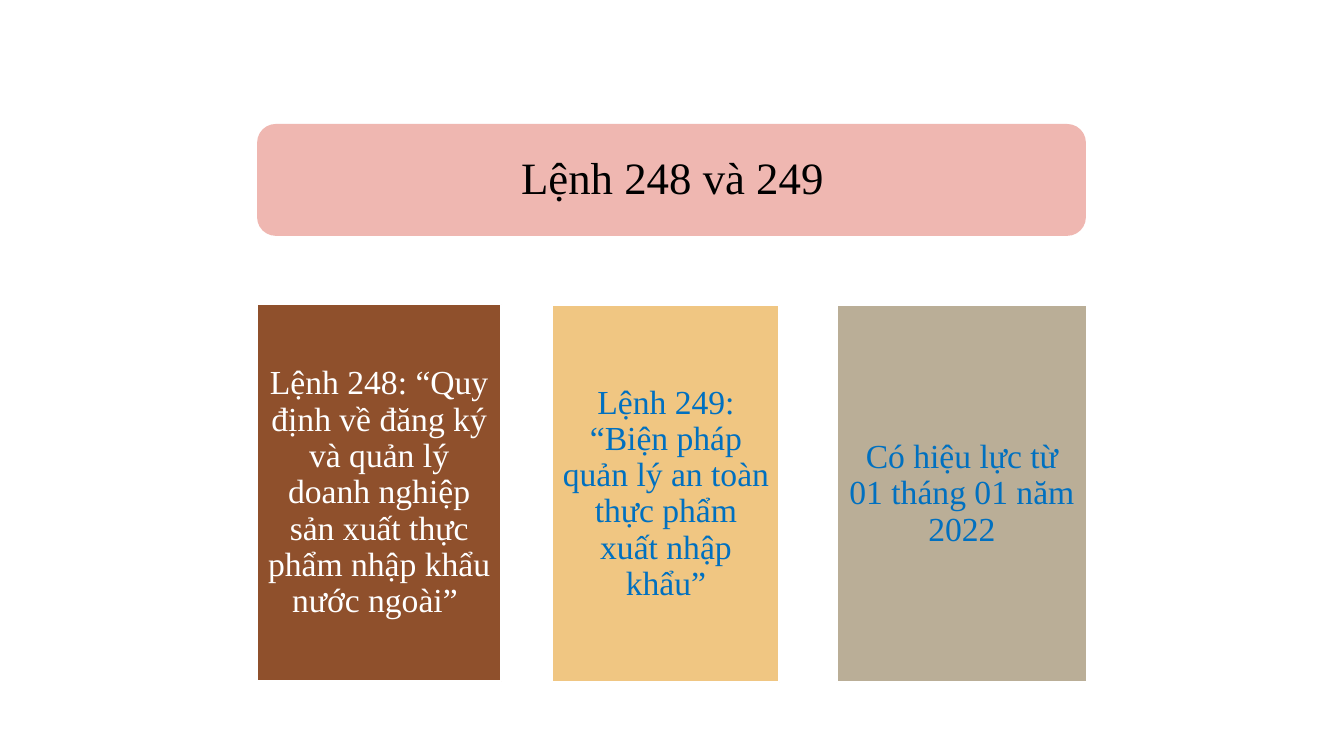
from dataclasses import dataclass

from pptx import Presentation
from pptx.dml.color import RGBColor
from pptx.enum import shapes, text
from pptx.util import Inches, Pt


@dataclass(frozen=True)
class Theme:
    font: str = "Times New Roman"
    title_size: int = 32
    card_size: int = 24
    black: str = "000000"
    white: str = "FFFFFF"
    blue: str = "0070C0"
    pink: str = "EFB7B1"
    brown: str = "8F502C"
    amber: str = "F0C682"
    taupe: str = "BAAE97"


@dataclass(frozen=True)
class Card:
    left: float
    top: float
    width: float
    fill: str
    color: str
    words: str


THEME = Theme()
CARD_HEIGHT = 3.74
CARDS = [
    Card(2.55, 3.02, 2.42, THEME.brown, THEME.white,
         "Lệnh 248: “Quy định về đăng ký và quản lý doanh nghiệp "
         "sản xuất thực phẩm nhập khẩu nước ngoài” "),
    Card(5.48, 3.03, 2.25, THEME.amber, THEME.blue,
         "Lệnh 249: “Biện pháp quản lý an toàn thực phẩm xuất nhập khẩu”"),
    Card(8.3, 3.03, 2.48, THEME.taupe, THEME.blue,
         "Có hiệu lực từ 01 tháng 01 năm 2022"),
]


def write(sp, words: str, *, size: int, color: str, inset: float) -> None:
    """Put one centred paragraph in the middle of a shape."""
    tf = sp.text_frame
    tf.text = words
    tf.word_wrap = True
    tf.auto_size = text.MSO_AUTO_SIZE.NONE
    tf.vertical_anchor = text.MSO_ANCHOR.MIDDLE
    tf.margin_left = tf.margin_right = Inches(inset)
    tf.margin_top = tf.margin_bottom = Inches(inset)
    p = tf.paragraphs[0]
    p.alignment = text.PP_ALIGN.CENTER
    p.line_spacing = 0.9
    font = p.runs[0].font
    font.name = THEME.font
    font.size = Pt(size)
    font.color.rgb = RGBColor.from_string(color)


def add_block(slide, kind, left: float, top: float, width: float,
              height: float, fill: str):
    sp = slide.shapes.add_shape(kind, Inches(left), Inches(top),
                                Inches(width), Inches(height))
    sp.shadow.inherit = False
    sp.fill.solid()
    sp.fill.fore_color.rgb = RGBColor.from_string(fill)
    sp.line.fill.background()
    return sp


def add_heading(slide, words: str) -> None:
    """Draw the banner and lay the slide title over it."""
    banner = add_block(slide, shapes.MSO_SHAPE.ROUNDED_RECTANGLE,
                       2.55, 1.23, 8.22, 1.11, THEME.pink)
    title = slide.shapes.title
    title.left, title.top = Inches(2.66), Inches(1.29)
    title.width, title.height = Inches(8.02), Inches(1)
    write(title, words, size=THEME.title_size, color=THEME.black, inset=0.16)
    banner._element.addnext(title._element)


def add_card(slide, card: Card) -> None:
    sp = add_block(slide, shapes.MSO_SHAPE.RECTANGLE, card.left, card.top,
                   card.width, CARD_HEIGHT, card.fill)
    sp.line.color.rgb = RGBColor.from_string(THEME.white)
    sp.line.width = Pt(1.25)
    write(sp, card.words, size=THEME.card_size, color=card.color, inset=0.1)


def main() -> None:
    prs = Presentation()
    prs.slide_width, prs.slide_height = Inches(13.33), Inches(7.5)
    slide = prs.slides.add_slide(prs.slide_layouts.get_by_name("Title Only"))
    add_heading(slide, "Lệnh 248 và 249")
    for card in CARDS:
        add_card(slide, card)
    prs.save("out.pptx")


if __name__ == "__main__":
    main()
